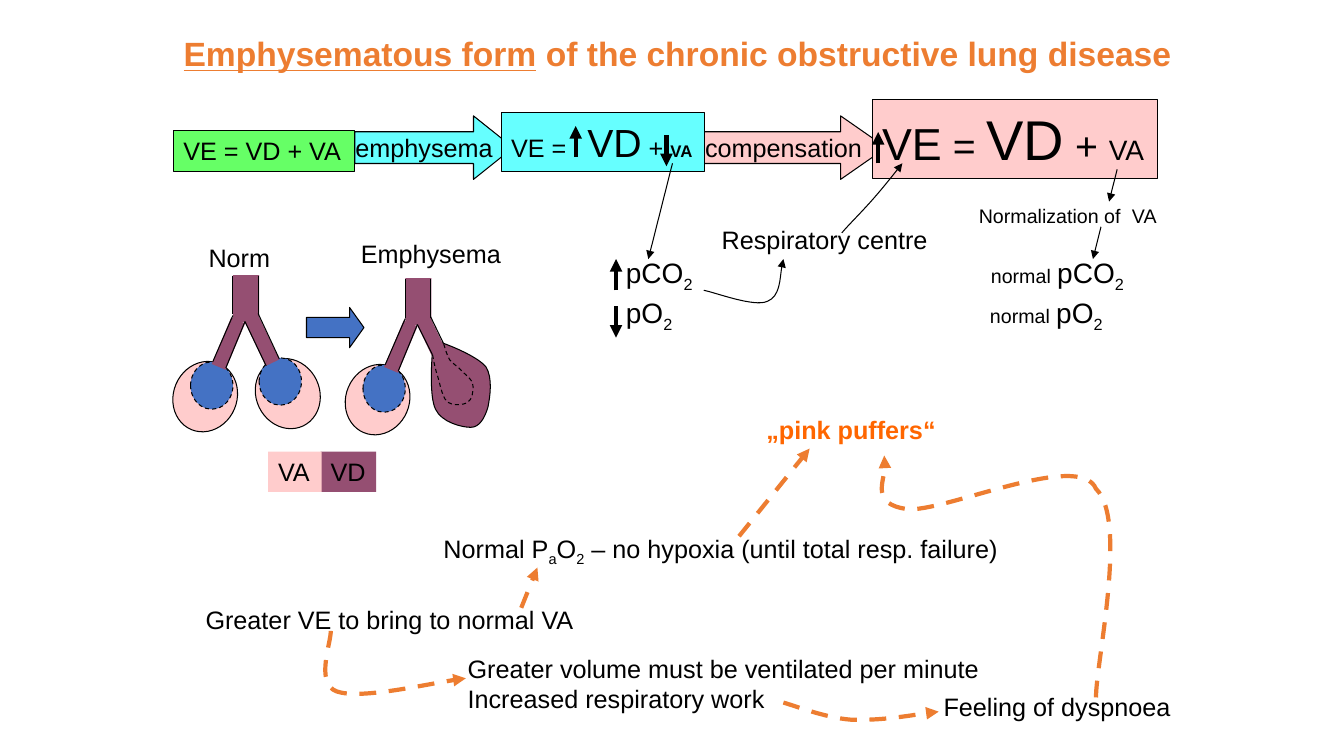
from lxml import etree
from pptx import Presentation
from pptx.dml.color import RGBColor
from pptx.enum.dml import MSO_LINE
from pptx.enum.shapes import MSO_CONNECTOR, MSO_SHAPE
from pptx.enum.text import MSO_ANCHOR, MSO_AUTO_SIZE, PP_ALIGN
from pptx.oxml.ns import qn
from pptx.util import Inches, Pt

RECTANGLE, ELLIPSE, BLOCK_ARROW = MSO_SHAPE.RECTANGLE, MSO_SHAPE.OVAL, MSO_SHAPE.RIGHT_ARROW
STRAIGHT, DASH = MSO_CONNECTOR.STRAIGHT, MSO_LINE.DASH
LEFT, CENTER, RIGHT = PP_ALIGN.LEFT, PP_ALIGN.CENTER, PP_ALIGN.RIGHT
TOP, MIDDLE = MSO_ANCHOR.TOP, MSO_ANCHOR.MIDDLE

BLACK = RGBColor(0, 0, 0)
ORANGE = RGBColor(0xED, 0x7D, 0x31)
BRIGHT_ORANGE = RGBColor(0xFF, 0x66, 0x00)
CYAN = RGBColor(0x66, 0xFF, 0xFF)
GREEN = RGBColor(0x66, 0xFF, 0x66)
PINK = RGBColor(0xFF, 0xCC, 0xCC)
PLUM = RGBColor(0x95, 0x4F, 0x72)
BLUE = RGBColor(0x44, 0x72, 0xC4)
THIN, THICK = 0.75, 3
TILT_LEFT, TILT_RIGHT = 22.8, -25.5

TITLE_BOX = (1.72, 0.28, 10.3, 0.5)
TITLE = [("Emphysematous form", 24, "bu"), (" of the chronic obstructive lung disease", 24, "b")]

BLOCK_ARROWS = [
    ((3.52, 1.15, 1.57, 0.63), 0.625, CYAN, "emphysema"),
    ((6.98, 1.15, 1.81, 0.63), 0.718, PINK, "compensation"),
    ((3.04, 3.05, 0.57, 0.4), 0.358, BLUE, ""),
]
EQUATIONS = [
    ((4.97, 1.12, 2.02, 0.58), CYAN,
     [("VE =", 18, ""), (" ", 18, "w"), ("VD", 28, ""), (" + ", 18, ""), ("VA", 12, "b")]),
    ((1.72, 1.29, 1.8, 0.41), GREEN, [("VE = VD + VA", 18, "")]),
    ((8.65, 0.99, 2.83, 0.78), PINK,
     [("VE", 32, ""), (" = ", 28, ""), ("VD", 40, ""), (" + ", 28, ""), ("VA", 20, "")]),
]
LEGEND = [((3.18, 4.48, 0.55, 0.4), PLUM, "VD"), ((2.66, 4.48, 0.53, 0.4), PINK, "VA")]

CARBON_DIOXIDE = [("pCO", 20, ""), ("2", 20, "s")]
OXYGEN = [("pO", 20, ""), ("2", 20, "s")]
NORMAL = [("normal", 14, ""), (" ", 16, "")]
TIGHT_LABELS = [
    ((7.06, 2.18, 2.24, 0.4), [("Respiratory centre", 18, "")]),
    ((9.61, 1.97, 1.97, 0.33), [("Normalization of", 14, ""), (" ", 14, "n"), ("VA", 14, "")]),
    ((4.3, 5.24, 5.72, 0.4),
     [("Normal P", 18, ""), ("a", 18, "s"), ("O", 18, ""), ("2", 18, "s"),
      (" – no hypoxia (until total resp. failure)", 18, "")]),
    ((9.26, 6.81, 2.45, 0.4), [("Feeling of dyspnoea", 18, "")]),
    ((1.97, 2.35, 0.81, 0.4), [("Norm", 18, "")]),
    ((3.48, 2.32, 1.59, 0.4), [("Emphysema", 18, "")]),
]
WIDE_LABELS = [
    ((9.73, 2.49, 2.2, 0.43), [NORMAL + CARBON_DIOXIDE]),
    ((9.72, 2.88, 1.91, 0.43), [NORMAL + OXYGEN]),
    ((6.11, 2.49, 1.73, 0.43), [CARBON_DIOXIDE]),
    ((6.11, 2.88, 1.73, 0.43), [OXYGEN]),
    ((1.94, 5.95, 5.83, 0.4), [[("Greater VE to bring to normal VA", 18, "")]]),
    ((4.54, 6.43, 5.34, 0.7),
     [[("Greater volume must be ventilated per minute", 18, "")],
      [("Increased respiratory work", 18, "")]]),
]
PUFFERS_BOX = (5.33, 4.06, 4.05, 0.4)
PUFFERS = [[("„pink puffers“", 18, "b")]]

CHANGE_LENGTH = 0.31
RISES = [(6.11, 2.57), (8.71, 1.31), (5.71, 1.25)]
FALLS = [(6.11, 3.04), (6.61, 1.34)]
THIN_ARROWS = [
    ((6.67, 1.62), (6.43, 2.57)), ((10.92, 2.25), (10.84, 2.57)), ((11.08, 1.68), (11, 2)),
]
DASHED_ARROWS = [((7.33, 5.32), (8.03, 4.45)), ((5.17, 6.03), (5.33, 5.63))]
THIN_CURVES = [
    [(6.98, 2.88), (7.09, 2.9), (7.48, 3.05), (7.61, 2.99), (7.74, 2.94), (7.74, 2.66), (7.77, 2.57)],
    [(8.35, 2.31), (8.39, 2.26), (8.51, 2.14), (8.61, 2.03), (8.72, 1.91), (8.88, 1.71), (8.95, 1.62)],
]
DASHED_CURVES = [
    [(10.87, 6.92), (10.87, 6.57), (11.19, 5.16), (10.87, 4.85), (10.71, 4.46), (9.33, 5.1),
     (8.99, 5.05), (8.64, 5), (8.82, 4.63), (8.77, 4.52)],
    [(3.28, 6.26), (3.29, 6.36), (3.12, 6.78), (3.34, 6.86), (3.57, 6.94), (4.35, 6.76), (4.62, 6.73)],
    [(7.77, 6.97), (7.88, 7), (8.18, 7.12), (8.44, 7.14), (8.74, 7.15), (9.13, 7.08), (9.31, 7.06)],
]
DAMAGED_LUNG = [
    (4.38, 3.4), (4.47, 3.43), (4.74, 3.54), (4.82, 3.64), (4.89, 3.75), (4.86, 3.94), (4.84, 4.04),
    (4.81, 4.14), (4.76, 4.24), (4.67, 4.24), (4.58, 4.24), (4.38, 4.19), (4.32, 4.06),
    (4.26, 3.94), (4.28, 3.6), (4.29, 3.49), (4.3, 3.38), (4.36, 3.42), (4.38, 3.4),
]
DAMAGED_SAC = [
    (4.29, 3.52), (4.3, 3.57), (4.31, 3.63), (4.33, 3.7), (4.36, 3.78), (4.38, 3.93), (4.43, 3.98),
    (4.48, 4.03), (4.6, 4.02), (4.64, 3.99), (4.68, 3.97), (4.7, 3.87), (4.69, 3.82),
    (4.69, 3.77), (4.63, 3.73), (4.59, 3.69), (4.55, 3.64), (4.49, 3.61), (4.46, 3.57),
    (4.43, 3.52), (4.41, 3.44), (4.4, 3.41),
]
EMPHYSEMA_SHIFT = (1.71, 0.03)

presentation = Presentation()
presentation.slide_width, presentation.slide_height = Inches(13.33), Inches(7.5)
slide = presentation.slides.add_slide(presentation.slide_layouts[5])
shapes = slide.shapes


def write(shape, paragraphs, color=BLACK, align=LEFT, wrap=False, anchor=TOP):
    frame = shape.text_frame
    frame.word_wrap, frame.vertical_anchor = wrap, anchor
    frame.auto_size = MSO_AUTO_SIZE.NONE
    for index, runs in enumerate(paragraphs):
        paragraph = frame.add_paragraph() if index else frame.paragraphs[0]
        paragraph.alignment = align
        for text, size, style in runs:
            run = paragraph.add_run()
            run.text = text
            font = run.font
            font.name, font.size, font.color.rgb = "Arial", Pt(size), color
            font.bold, font.underline = "b" in style, "u" in style
            properties = run._r.get_or_add_rPr()
            if "s" in style:
                properties.set("baseline", "-25000")
            if "w" in style or "n" in style:
                properties.set("spc", "1000" if "w" in style else "400")


def add_label(box, paragraphs, **options):
    write(shapes.add_textbox(*map(Inches, box)), paragraphs, **options)


def style_line(shape, color=BLACK, width=THIN, dashed=False, arrow=False):
    shape.line.color.rgb, shape.line.width = color, Pt(width)
    if dashed:
        shape.line.dash_style = DASH
    if arrow:
        etree.SubElement(shape.line._get_or_add_ln(), qn("a:tailEnd"), type="triangle")


def add_figure(kind, box, fill, outlined=True, dashed=False, rotation=0):
    shape = shapes.add_shape(kind, *map(Inches, box))
    shape.shadow.inherit = False
    shape.rotation = rotation
    shape.fill.solid()
    shape.fill.fore_color.rgb = fill
    if outlined:
        style_line(shape, dashed=dashed)
    else:
        shape.line.fill.background()
    return shape


def add_line(start, end, **line_style):
    connector = shapes.add_connector(STRAIGHT, *map(Inches, (*start, *end)))
    etree.SubElement(connector._element.spPr, qn("a:effectLst"))
    style_line(connector, **line_style)


def add_curve(points, fill=None, closed=False, **line_style):
    start, *rest = [(Inches(x), Inches(y)) for x, y in points]
    builder = shapes.build_freeform(*start)
    builder.add_line_segments(rest, close=closed)
    shape = builder.convert_to_shape()
    shape.shadow.inherit = False
    segments = list(shape._element.iter(qn("a:lnTo")))
    for first in range(0, len(segments), 3):
        bezier = etree.Element(qn("a:cubicBezTo"))
        segments[first].addprevious(bezier)
        for segment in segments[first:first + 3]:
            bezier.append(segment[0])
            segment.getparent().remove(segment)
    if fill is None:
        shape.fill.background()
    else:
        shape.fill.solid()
        shape.fill.fore_color.rgb = fill
    style_line(shape, **line_style)


def add_airways(shift, healthy):
    across, down = shift

    def part(kind, left, top, width, height, fill, **options):
        add_figure(kind, (left + across, top + down, width, height), fill, **options)

    part(ELLIPSE, 1.72, 3.58, 0.63, 0.71, PINK, rotation=TILT_LEFT)
    part(ELLIPSE, 1.89, 3.59, 0.42, 0.47, BLUE, dashed=True)
    if healthy:
        part(ELLIPSE, 2.54, 3.55, 0.63, 0.71, PINK, rotation=TILT_RIGHT)
        part(ELLIPSE, 2.57, 3.55, 0.42, 0.47, BLUE, dashed=True)
    part(RECTANGLE, 2.49, 2.99, 0.15, 0.64, PLUM, outlined=False, rotation=TILT_RIGHT)
    part(RECTANGLE, 2.31, 2.73, 0.26, 0.47, PLUM, outlined=False)
    part(RECTANGLE, 2.19, 3.16, 0.15, 0.5, PLUM, outlined=False, rotation=TILT_LEFT)
    outer, inner = ((2.77, 3.56), (2.64, 3.63)) if healthy else ((2.69, 3.38), (2.58, 3.49))
    walls = [((2.31, 2.74), (2.31, 3.12)), ((2.56, 2.74), (2.56, 3.12)),
             ((2.11, 3.59), (2.31, 3.13)), ((2.24, 3.65), (2.43, 3.19)),
             (outer, (2.56, 3.11)), (inner, (2.43, 3.19))]
    for wall in walls:
        add_line(*[(x + across, y + down) for x, y in wall])


title = shapes.title
title.left, title.top, title.width, title.height = map(Inches, TITLE_BOX)
write(title, [TITLE], color=ORANGE)

for box, head, fill, text in BLOCK_ARROWS:
    arrow = add_figure(BLOCK_ARROW, box, fill)
    arrow.adjustments[1] = head
    if text:
        write(arrow, [[(text, 18, "")]], align=CENTER, anchor=MIDDLE)
for box, fill, runs in EQUATIONS:
    write(add_figure(RECTANGLE, box, fill), [runs])
for box, runs in TIGHT_LABELS:
    add_label(box, [runs])
for box, paragraphs in WIDE_LABELS:
    add_label(box, paragraphs, wrap=True)
add_label(PUFFERS_BOX, PUFFERS, color=BRIGHT_ORANGE, align=RIGHT, wrap=True)

for x, y in RISES:
    add_line((x, y + CHANGE_LENGTH), (x, y), width=THICK, arrow=True)
for x, y in FALLS:
    add_line((x, y), (x, y + CHANGE_LENGTH), width=THICK, arrow=True)
for start, end in THIN_ARROWS:
    add_line(start, end, arrow=True)
for start, end in DASHED_ARROWS:
    add_line(start, end, color=ORANGE, width=THICK, dashed=True, arrow=True)
for points in THIN_CURVES:
    add_curve(points, arrow=True)
for points in DASHED_CURVES:
    add_curve(points, color=ORANGE, width=THICK, dashed=True, arrow=True)

add_curve(DAMAGED_LUNG, fill=PLUM, closed=True)
add_airways((0, 0), healthy=True)
add_airways(EMPHYSEMA_SHIFT, healthy=False)
add_curve(DAMAGED_SAC, fill=PLUM, dashed=True)
for box, fill, text in LEGEND:
    write(add_figure(RECTANGLE, box, fill, outlined=False), [[(text, 18, "")]])

presentation.save("out.pptx")
